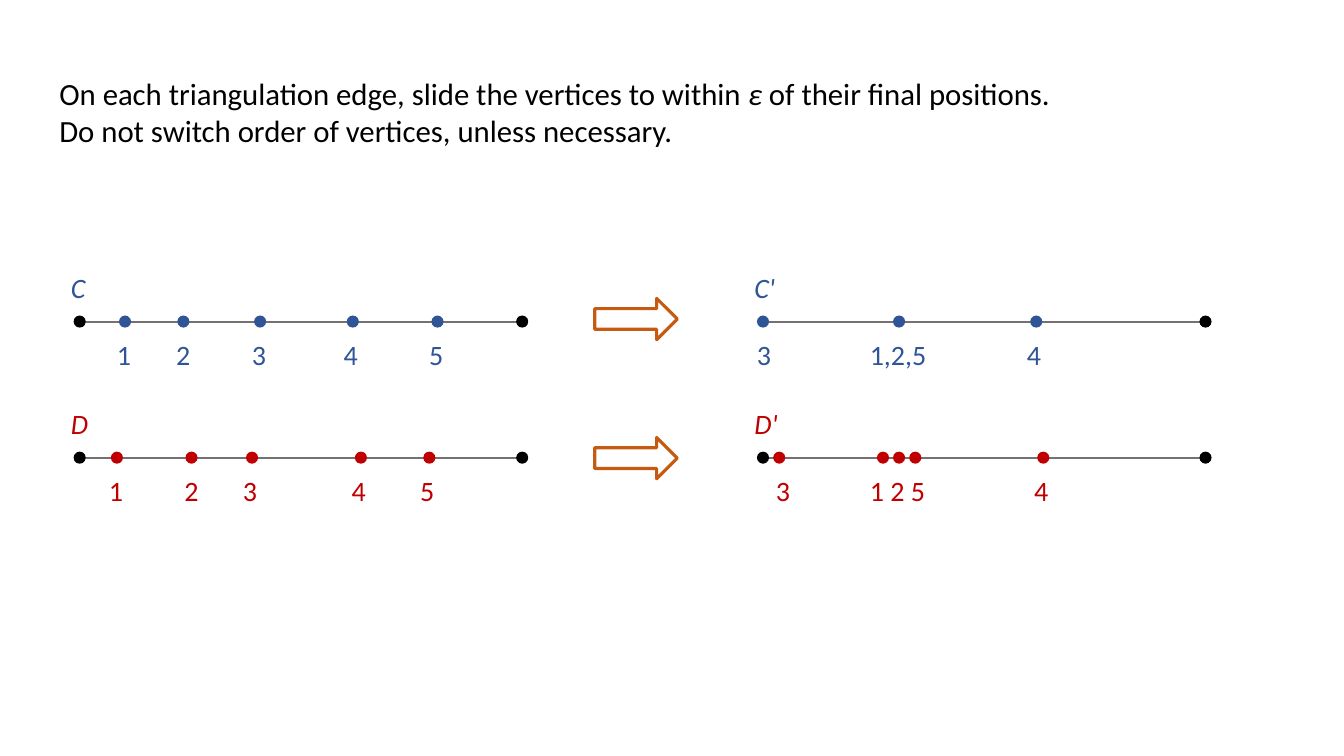
import pptx
import pptx.util
import pptx.dml.color
import pptx.enum.shapes
import pptx.enum.text
import pptx.oxml.ns
import lxml.etree

Pt = pptx.util.Pt
RGBColor = pptx.dml.color.RGBColor
SHAPES = pptx.enum.shapes.MSO_SHAPE

BLACK = RGBColor(0x00, 0x00, 0x00)
WHITE = RGBColor(0xFF, 0xFF, 0xFF)
BLUE = RGBColor(0x2F, 0x55, 0x97)
RED = RGBColor(0xC0, 0x00, 0x00)
GREY = RGBColor(0x76, 0x71, 0x71)
ORANGE = RGBColor(0xC5, 0x5A, 0x11)

EDGE_LENGTH = 316.1
DOT_SIZE = 8.64
LEFT_START, RIGHT_START = 56.9, 545
UPPER_Y, LOWER_Y = 229.7, 326.9

presentation = pptx.Presentation()
presentation.slide_width = Pt(960)
presentation.slide_height = Pt(540)
slide = presentation.slides.add_slide(presentation.slide_layouts[6])


def add_text(text, left, top, width, height, size, color, italic=False):
    box = slide.shapes.add_textbox(Pt(left), Pt(top), Pt(width), Pt(height))
    frame = box.text_frame
    frame.word_wrap = True
    frame.auto_size = pptx.enum.text.MSO_AUTO_SIZE.SHAPE_TO_FIT_TEXT
    frame.text = text
    for paragraph in frame.paragraphs:
        paragraph.font.name = "Calibri"
        paragraph.font.size = Pt(size)
        paragraph.font.color.rgb = color
        paragraph.font.italic = italic
    return frame


def add_filled_shape(kind, left, top, width, height, color):
    shape = slide.shapes.add_shape(kind, Pt(left), Pt(top), Pt(width), Pt(height))
    shape.shadow.inherit = False
    shape.fill.solid()
    shape.fill.fore_color.rgb = color
    shape.line.fill.background()
    return shape


instructions = add_text(
    "On each triangulation edge, slide the vertices to within \n"
    "Do not switch order of vertices, unless necessary.",
    35.3, 49.7, 841, 60.5, 22, BLACK)
first_paragraph = instructions.paragraphs[0]
epsilon = first_paragraph.add_run()
epsilon.text = "ε"
epsilon.font.italic = True
first_paragraph.add_run().text = " of their final positions."

edges = [
    ("C", BLUE, LEFT_START, UPPER_Y, [89.3, 131, 185.8, 252, 312.5],
     [("1", 76.3), ("2", 118.8), ("3", 172.8), ("4", 238.3), ("5", 299.5)]),
    ("C'", BLUE, RIGHT_START, UPPER_Y, [RIGHT_START, 642.2, 740.2],
     [("3", 533.5), ("1,2,5", 614.2), ("4", 726.5)]),
    ("D", RED, LEFT_START, LOWER_Y, [83.5, 136.8, 180, 257.8, 306.7],
     [("1", 70.6), ("2", 124.6), ("3", 166.3), ("4", 244.1), ("5", 293)]),
    ("D'", RED, RIGHT_START, LOWER_Y, [556.6, 630.7, 642.2, 653.8, 745.2],
     [("3", 547.2), ("1 2 5", 614.2), ("4", 731.5)]),
]

for name, color, start, y, vertices, labels in edges:
    end = start + EDGE_LENGTH
    edge = slide.shapes.add_connector(
        pptx.enum.shapes.MSO_CONNECTOR.STRAIGHT, Pt(start), Pt(y), Pt(end), Pt(y))
    edge.line.color.rgb = GREY
    edge.line.width = Pt(1.5)
    lxml.etree.SubElement(
        edge._element.spPr, pptx.oxml.ns.qn("a:effectLst"))

    dots = [(x, BLACK) for x in (start, end) if x not in vertices]
    dots += [(x, color) for x in vertices]
    for x, dot_color in dots:
        add_filled_shape(SHAPES.OVAL, x - DOT_SIZE / 2, y - DOT_SIZE / 2,
                         DOT_SIZE, DOT_SIZE, dot_color)

    add_text(name, start - 13.3, y - 40.3, 35.3, 31.5, 20, color, italic=True)
    for label, left in labels:
        width = 35.3 if len(label) == 1 else 59
        add_text(label, left, y + 7.9, width, 31.5, 20, color)

for top in (213.1, 312.5):
    arrow = add_filled_shape(SHAPES.RIGHT_ARROW, 424.8, top, 59, 29.5, WHITE)
    arrow.line.color.rgb = ORANGE
    arrow.line.width = Pt(2.25)

presentation.save("out.pptx")
